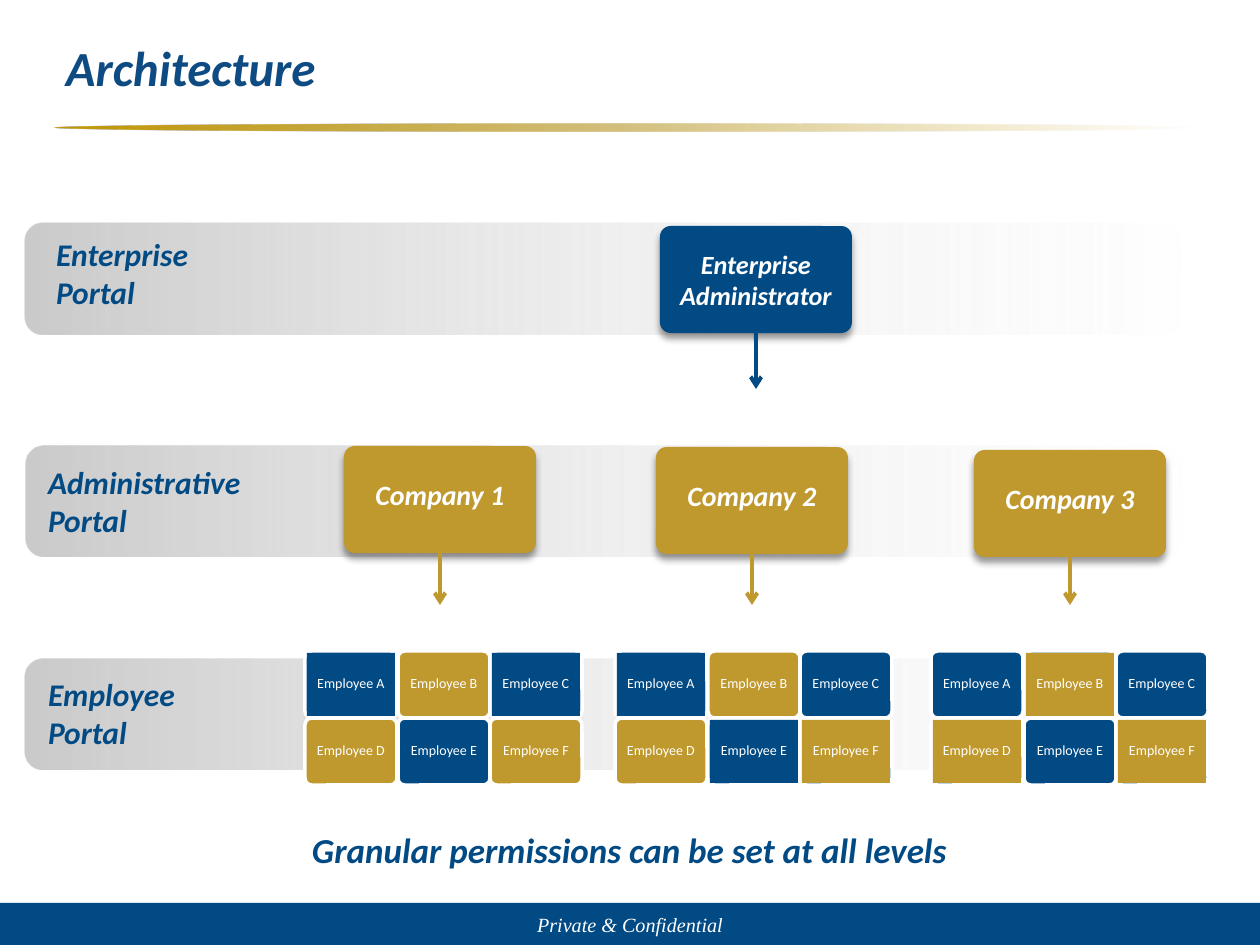
from dataclasses import dataclass

from lxml import etree
from pptx import Presentation
from pptx import util as u
from pptx.dml.color import RGBColor
from pptx.enum import shapes, text
from pptx.oxml import ns


@dataclass(frozen=True)
class Theme:
    blue: str = "024A84"
    gold: str = "BF982E"
    title_blue: str = "0E4B83"
    tile_back: str = "4F81BD"
    white: str = "FFFFFF"
    shadow: str = "000000"
    band_stops: tuple = ((0, "CACACA", 100), (50, "DDDDDD", 48), (100, "EEEEEE", 5))
    rule_stops: tuple = ((0, "C29806", 100), (50, "A98300", 50), (100, "C89B00", 0))
    font: str = "Calibri"
    footer_font: str = "Times New Roman"
    title_size: float = 28
    message_size: float = 20
    band_size: float = 18
    company_size: float = 16
    administrator_size: float = 15
    footer_size: float = 11.5
    tile_size: float = 8
    arrow_width: float = 2.25
    tile_line: float = 2


THEME = Theme()
PX_PER_INCH = 126
KINDS = shapes.MSO_SHAPE
CENTER = text.PP_ALIGN.CENTER
LEFT = text.PP_ALIGN.LEFT
MIDDLE = text.MSO_ANCHOR.MIDDLE
TOP = text.MSO_ANCHOR.TOP


def px(value):
    return round(value * u.Inches(1) / PX_PER_INCH)


def rgb(color):
    return RGBColor.from_string(color)


def write(shape, lines, size, color, align=CENTER, anchor=MIDDLE, bold=True,
          italic=True, font=THEME.font, insets=(13, 6, 13, 6)):
    frame = shape.text_frame
    frame.text = "\n".join(lines)
    frame.word_wrap = True
    frame.auto_size = text.MSO_AUTO_SIZE.NONE
    frame.vertical_anchor = anchor
    (frame.margin_left, frame.margin_top,
     frame.margin_right, frame.margin_bottom) = map(px, insets)
    for paragraph in frame.paragraphs:
        paragraph.alignment = align
        paragraph.font.name = font
        paragraph.font.size = u.Pt(size)
        paragraph.font.bold = bold
        paragraph.font.italic = italic
        paragraph.font.color.rgb = rgb(color)


def add_shape(parent, kind, box, color=None):
    shape = parent.add_shape(kind, *map(px, box))
    shape.shadow.inherit = False
    shape.line.fill.background()
    if color:
        shape.fill.solid()
        shape.fill.fore_color.rgb = rgb(color)
    return shape


def add_text(parent, box, lines, size, color, **style):
    shape = parent.add_textbox(*map(px, box))
    write(shape, lines, size, color, **style)
    return shape


def add_color(parent, color, opacity):
    element = etree.SubElement(parent, ns.qn("a:srgbClr"), val=color)
    etree.SubElement(element, ns.qn("a:alpha"), val=str(opacity * 1000))


def fill_gradient(shape, stops):
    shape.fill.gradient()
    shape.fill.gradient_angle = 0
    stop_list = shape._element.spPr.find(".//" + ns.qn("a:gsLst"))
    stop_list.clear()
    for position, color, opacity in stops:
        stop = etree.SubElement(stop_list, ns.qn("a:gs"), pos=str(position * 1000))
        add_color(stop, color, opacity)


def add_title(slide, box):
    title = slide.shapes.title
    title.left, title.top, title.width, title.height = map(px, box)
    write(title, ["Architecture"], THEME.title_size, THEME.title_blue, align=LEFT)


def add_rule(slide, box):
    fill_gradient(add_shape(slide.shapes, KINDS.OVAL, box), THEME.rule_stops)


def add_footer(slide, box):
    left, top, width, height = box
    add_shape(slide.shapes, KINDS.RECTANGLE, box, THEME.blue)
    add_text(slide.shapes, (left + 444, top + 2, width - 888, height - 4),
             ["Private & Confidential"], THEME.footer_size, THEME.white,
             bold=False, font=THEME.footer_font)


def add_band(slide, box, lines, label_x, label_y):
    left, top = box[:2]
    group = slide.shapes.add_group_shape()
    band = add_shape(group.shapes, KINDS.ROUNDED_RECTANGLE, box)
    fill_gradient(band, THEME.band_stops)
    add_text(group.shapes, (left + label_x, top + label_y, 307, 89), lines,
             THEME.band_size, THEME.blue, align=LEFT, anchor=TOP)


def add_card(slide, box, lines, size, color, arrow_end, bottom_inset):
    left, top, width, height = box
    card = add_shape(slide.shapes, KINDS.ROUNDED_RECTANGLE, box, color)
    card.adjustments[0] = 0.1
    effects = card._element.spPr.find(ns.qn("a:effectLst"))
    shadow = etree.SubElement(effects, ns.qn("a:outerShdw"), blurRad=str(u.Pt(4)),
                              dist=str(u.Pt(3)), dir="5400000", rotWithShape="0")
    add_color(shadow, THEME.shadow, 40)
    write(card, lines, size, THEME.white, insets=(6, 6, 6, bottom_inset))

    center = px(left + width // 2)
    arrow = slide.shapes.add_connector(shapes.MSO_CONNECTOR.STRAIGHT, center,
                                       px(top + height), center, px(arrow_end))
    arrow.begin_connect(card, 2)
    arrow.line.color.rgb = rgb(color)
    arrow.line.width = u.Pt(THEME.arrow_width)
    etree.SubElement(arrow.line._get_or_add_ln(), ns.qn("a:tailEnd"), type="arrow")
    etree.SubElement(arrow._element.spPr, ns.qn("a:effectLst"))


def add_tile(slide, box, letter, color, square):
    left, top, width, height = box
    back = add_shape(slide.shapes, KINDS.ROUNDED_RECTANGLE, box,
                     THEME.tile_back if square else color)
    back.adjustments[0] = 0.1
    back.line.color.rgb = rgb(THEME.white)
    back.line.width = u.Pt(THEME.tile_line)
    label = add_text(slide.shapes, (left + 2, top + 2, width - 4, height - 4),
                     [f"Employee {letter}"], THEME.tile_size, THEME.white,
                     bold=False, italic=False, insets=(5, 5, 5, 5))
    label.text_frame.paragraphs[0].line_spacing = 0.9
    if square:
        label.fill.solid()
        label.fill.fore_color.rgb = rgb(color)


def add_employees(slide, left, top, square_letters):
    for index, letter in enumerate("ABCDEF"):
        row, column = divmod(index, 3)
        box = (left + (column * 185 + 1) // 2, top + row * 67, 92, 67)
        color = THEME.gold if index % 2 else THEME.blue
        add_tile(slide, box, letter, color, letter in square_letters)


def main():
    presentation = Presentation()
    presentation.slide_width = px(1260)
    presentation.slide_height = px(945)
    slide = presentation.slides.add_slide(presentation.slide_layouts[5])

    add_rule(slide, (55, 124, 1147, 7))
    add_footer(slide, (0, 903, 1260, 42))
    add_title(slide, (53, 29, 1144, 75))

    bands = (
        (25, 223, "Enterprise", 18, 6),
        (26, 446, "Administrative", 9, 11),
        (25, 659, "Employee", 10, 10),
    )
    for left, top, name, label_x, label_y in bands:
        add_band(slide, (left, top, 1155, 111), [name, "Portal"], label_x, label_y)

    add_card(slide, (660, 226, 192, 107), ["Enterprise", "Administrator"],
             THEME.administrator_size, THEME.blue, 389, 6)

    companies = ((344, 446, 305, "AC"), (656, 447, 615, "AEF"), (974, 450, 931, "BDF"))
    for number, (left, top, tiles_left, square_letters) in enumerate(companies, 1):
        add_card(slide, (left, top, 192, 107), [f"Company {number}"],
                 THEME.company_size, THEME.gold, 605, 16)
        add_employees(slide, tiles_left, 651, square_letters)

    add_text(slide.shapes, (204, 802, 851, 94),
             ["Granular permissions can be set at all levels"],
             THEME.message_size, THEME.blue)
    presentation.save("out.pptx")


if __name__ == "__main__":
    main()
